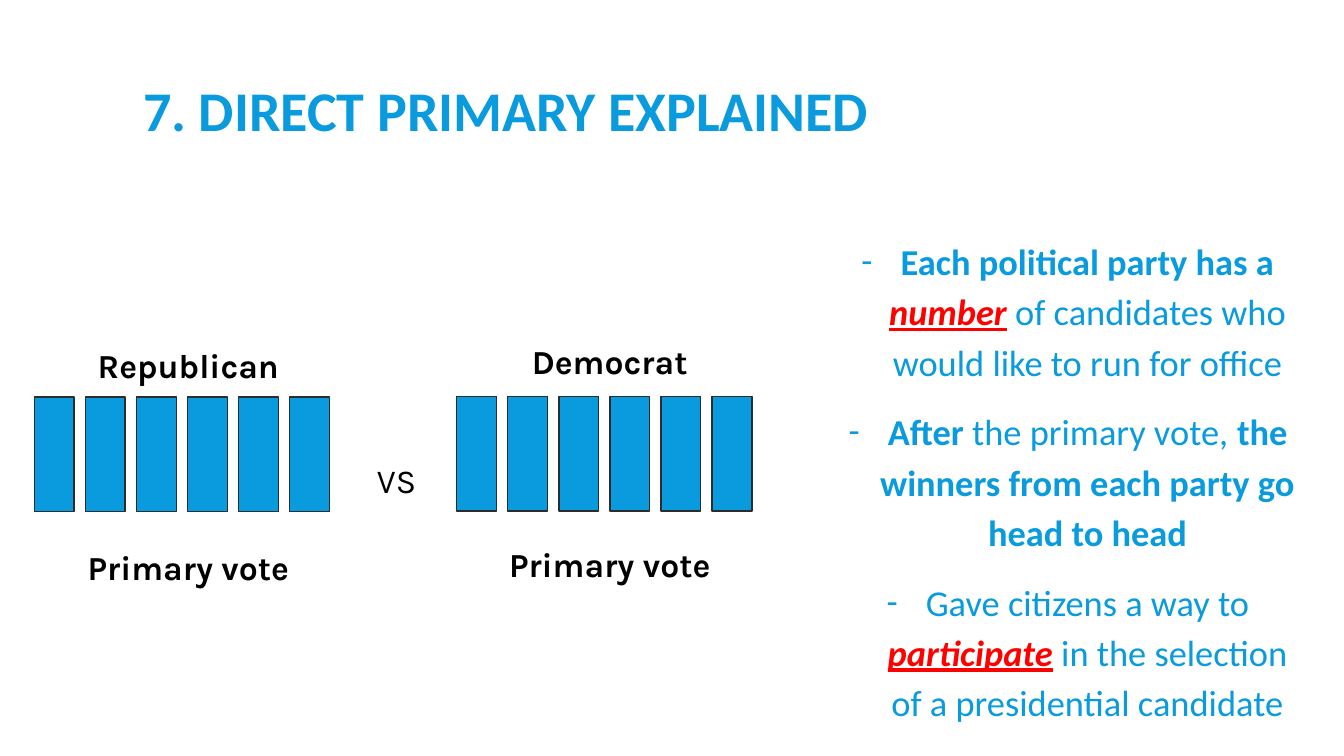
from pptx import Presentation
from pptx.dml.color import RGBColor
from pptx.enum.shapes import MSO_SHAPE as Shape
from pptx.enum.text import MSO_ANCHOR as Anchor, MSO_AUTO_SIZE as AutoSize, PP_ALIGN as Align
from pptx.oxml.ns import qn
from pptx.util import Pt
from lxml.etree import SubElement

COLORS = {"blue": "099BDD", "red": "FF0000", "black": "000000", "outline": "2C2C2C"}

# Content
TITLE = "7. DIRECT PRIMARY EXPLAINED"
POINTS = [  # each point is a list of (text, style)
    [("Each political party has a ", "bold"), ("number", "key"),
     (" of candidates who would like to run for office", "plain")],
    [("After", "bold"), (" the primary vote, ", "plain"),
     ("the winners from each party go head to head", "bold")],
    [("Gave citizens a way to ", "plain"), ("participate", "key"),
     (" in the selection of a presidential candidate", "plain")],
]
STYLES = {
    "plain": dict(bold=False),
    "bold": dict(bold=True),
    "key": dict(bold=True, italic=True, underline=True, color="red"),
}
PARTIES = [  # label box: left, top, width, height; then first bar's left and top
    dict(name="Republican", label=(-56, 242.6, 381, 225), bars=(24.5, 283.5)),
    dict(name="Democrat", label=(282.2, 239.8, 306.7, 240), bars=(326.2, 283)),
]
VOTE = "Primary vote"
CANDIDATES = 6
BAR_WIDTH, BAR_HEIGHT, BAR_PITCH = 28.4, 82, 36.5
VOTE_GAP = 116


def color_of(name):
    return RGBColor.from_string(COLORS[name])


def add_span(para, text, font="Calibri", size=26, color="blue",
             bold=False, italic=False, underline=False):
    span = para.add_run()
    span.text = text
    span.font.name, span.font.size = font, Pt(size)
    span.font.bold, span.font.italic, span.font.underline = bold, italic, underline
    span.font.color.rgb = color_of(color)


def place(shape, left, top, width, height):
    shape.left, shape.top = Pt(left), Pt(top)
    shape.width, shape.height = Pt(width), Pt(height)


def add_dash(para):
    props = para._p.get_or_add_pPr()
    props.set("marL", str(Pt(27.5)))
    props.set("indent", str(Pt(-28)))
    bullet_color = SubElement(props, qn("a:buClr"))
    SubElement(bullet_color, qn("a:srgbClr"), val=COLORS["blue"])
    SubElement(props, qn("a:buFont"), typeface="Calibri")
    SubElement(props, qn("a:buChar"), char="-")


def add_label(page, area, lines, gap=0, bold=True):
    frame = page.shapes.add_textbox(*[Pt(length) for length in area]).text_frame
    frame.word_wrap = True
    for index, line in enumerate(lines):
        para = frame.add_paragraph() if index else frame.paragraphs[0]
        para.alignment = Align.CENTER
        para.space_before = Pt(gap if index else 0)
        add_span(para, line, font="Karla", size=24, color="black", bold=bold)


def main():
    deck = Presentation()
    deck.slide_width, deck.slide_height = Pt(960), Pt(540)
    page = deck.slides.add_slide(deck.slide_layouts[1])

    # Title
    title = page.shapes.title
    place(title, 95, 22.3, 770.4, 118.8)
    title.text_frame.vertical_anchor = Anchor.MIDDLE
    title.text_frame.auto_size = AutoSize.NONE
    para = title.text_frame.paragraphs[0]
    para.alignment, para.line_spacing = Align.LEFT, 0.85
    add_span(para, TITLE, size=40, bold=True)

    # Explanation list
    body = page.placeholders[1]
    place(body, 589.7, 162.7, 347, 292.3)
    frame = body.text_frame
    frame.auto_size, frame.vertical_anchor = AutoSize.NONE, Anchor.TOP
    for index, point in enumerate(POINTS):
        para = frame.add_paragraph() if index else frame.paragraphs[0]
        add_dash(para)
        para.alignment, para.line_spacing = Align.CENTER, 1.15
        para.space_before = Pt(14 if index else 0)
        for text, style in point:
            add_span(para, text, **STYLES[style])

    # Parties with one bar per candidate
    for party in PARTIES:
        add_label(page, party["label"], [party["name"], VOTE], gap=VOTE_GAP)
        left, top = party["bars"]
        for number in range(CANDIDATES):
            bar = page.shapes.add_shape(
                Shape.RECTANGLE, Pt(left + number * BAR_PITCH), Pt(top),
                Pt(BAR_WIDTH), Pt(BAR_HEIGHT))
            bar.shadow.inherit = False
            bar.fill.solid()
            bar.fill.fore_color.rgb = color_of("blue")
            bar.line.color.rgb = color_of("outline")
            bar.line.width = Pt(1)
    add_label(page, (241.2, 324.7, 84.2, 80), ["VS"], bold=False)

    deck.save("out.pptx")


if __name__ == "__main__":
    main()
